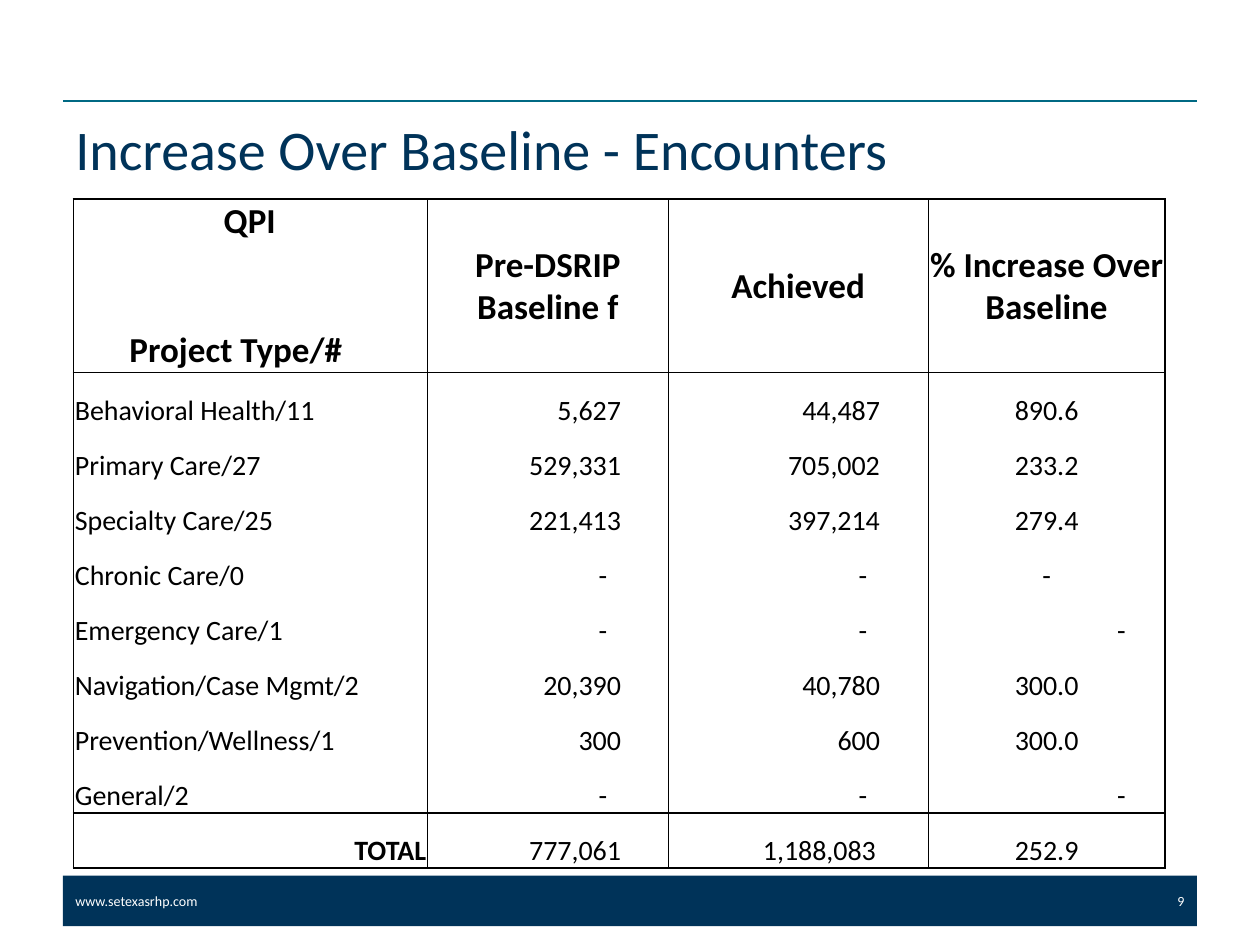
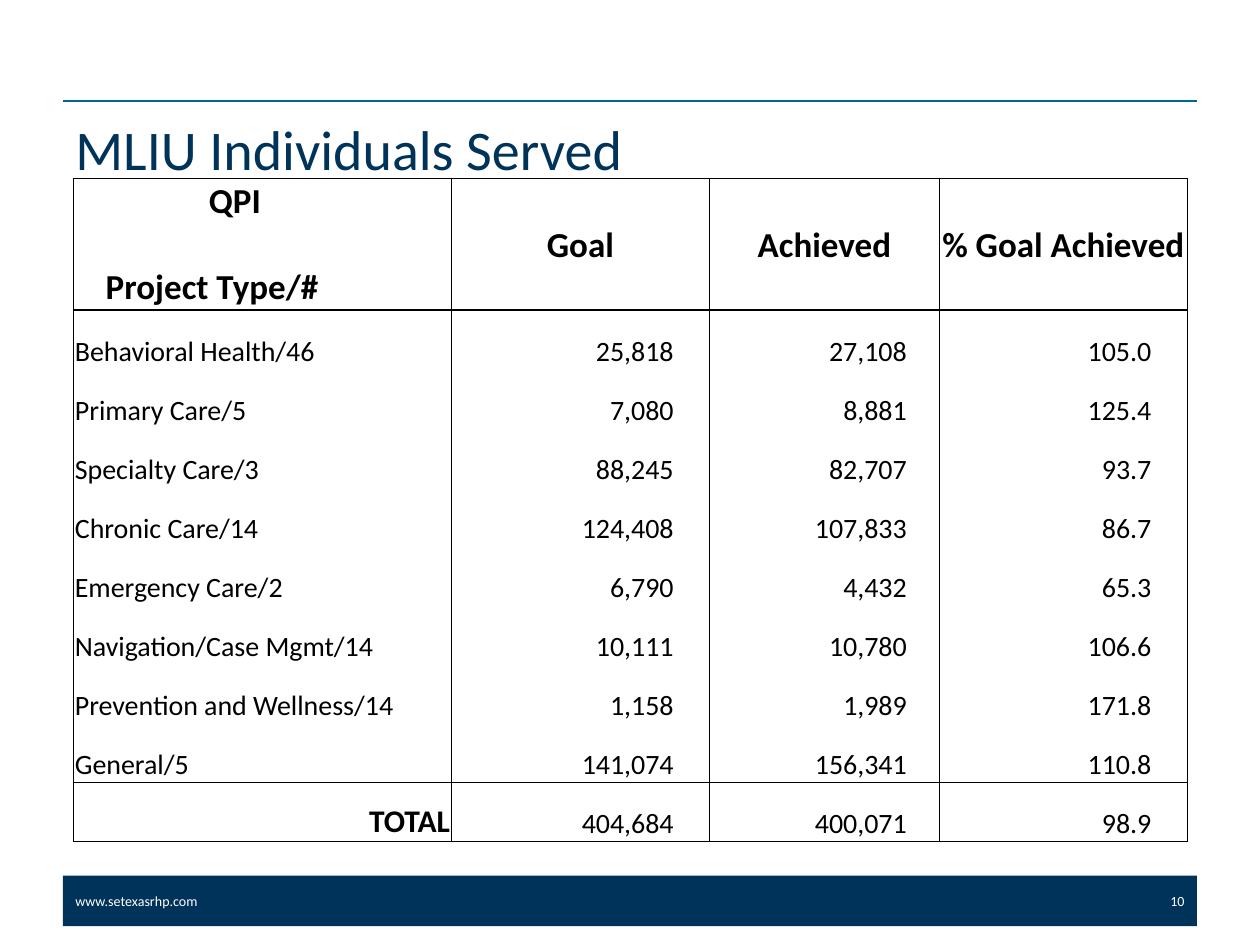
from itertools import product

from lxml.etree import SubElement
from pptx import Presentation
from pptx.dml.color import RGBColor
from pptx.enum.shapes import MSO_CONNECTOR, MSO_SHAPE
from pptx.enum.text import MSO_ANCHOR, PP_ALIGN
from pptx.oxml.ns import qn
from pptx.util import Cm, Pt

COLORS = {"navy": "003359", "teal": "006983", "white": "FFFFFF", "black": "000000"}
FONT = "Calibri"
LEFT, WIDTH = 1.27, 22.86
RULE_TOP = 2.03
BAND_TOP, BAND_HEIGHT = 17.65, 1.02
CELL_MARGIN = 0.03

ENCOUNTERS = [
    ("Behavioral Health/11", "5,627", "44,487", "890.6"),
    ("Primary Care/27", "529,331", "705,002", "233.2"),
    ("Specialty Care/25", "221,413", "397,214", "279.4"),
    ("Chronic Care/0", "-", "-", "-"),
    ("Emergency Care/1", "-", "-", "-"),
    ("Navigation/Case Mgmt/2", "20,390", "40,780", "300.0"),
    ("Prevention/Wellness/1", "300", "600", "300.0"),
    ("General/2", "-", "-", "-"),
    ("TOTAL", "777,061", "1,188,083", "252.9"),
]
INDIVIDUALS = [
    ("Behavioral Health/46", "25,818", "27,108", "105.0"),
    ("Primary Care/5", "7,080", "8,881", "125.4"),
    ("Specialty Care/3", "88,245", "82,707", "93.7"),
    ("Chronic Care/14", "124,408", "107,833", "86.7"),
    ("Emergency Care/2", "6,790", "4,432", "65.3"),
    ("Navigation/Case Mgmt/14", "10,111", "10,780", "106.6"),
    ("Prevention and Wellness/14", "1,158", "1,989", "171.8"),
    ("General/5", "141,074", "156,341", "110.8"),
    ("TOTAL", "404,684", "400,071", "98.9"),
]


def rgb(name):
    return RGBColor.from_string(COLORS[name])


def style(p, size, color="black", bold=False, align=PP_ALIGN.LEFT):
    p.alignment = align
    p.font.name = FONT
    p.font.size = Pt(size)
    p.font.bold = bold
    p.font.color.rgb = rgb(color)


def add_text(slide, text, x, y, w, h, size, color, align=PP_ALIGN.LEFT):
    tf = slide.shapes.add_textbox(Cm(x), Cm(y), Cm(w), Cm(h)).text_frame
    tf.word_wrap = True
    tf.vertical_anchor = MSO_ANCHOR.MIDDLE
    p = tf.paragraphs[0]
    p.text = text
    style(p, size, color, align=align)


def add_frame(slide, title, number):
    band = slide.shapes.add_shape(
        MSO_SHAPE.RECTANGLE, Cm(LEFT), Cm(BAND_TOP), Cm(WIDTH), Cm(BAND_HEIGHT))
    band.shadow.inherit = False
    band.fill.solid()
    band.fill.fore_color.rgb = rgb("navy")
    band.line.fill.background()
    add_text(slide, "www.setexasrhp.com", LEFT, BAND_TOP, 7.82, BAND_HEIGHT, 8, "white")
    add_text(slide, str(number), LEFT + WIDTH - 3.81, BAND_TOP, 3.81, BAND_HEIGHT,
             8, "white", PP_ALIGN.RIGHT)
    rule = slide.shapes.add_connector(
        MSO_CONNECTOR.STRAIGHT, Cm(LEFT), Cm(RULE_TOP), Cm(LEFT + WIDTH), Cm(RULE_TOP))
    rule.line.color.rgb = rgb("teal")
    rule.line.width = Pt(1)
    SubElement(rule._element.spPr, qn("a:effectLst"))
    add_text(slide, title, LEFT, RULE_TOP, WIDTH, 1.9, 32, "navy")


def set_borders(cell, widths):
    tcPr = cell._tc.get_or_add_tcPr()
    for side, width in zip("LRTB", widths):
        ln = SubElement(tcPr, qn(f"a:ln{side}"), w=str(Pt(width)))
        if width:
            fill = SubElement(ln, qn("a:solidFill"))
            SubElement(fill, qn("a:srgbClr"), val=COLORS["black"])
        else:
            SubElement(ln, qn("a:noFill"))


def fill_corner(cell, indents, gap):
    cell.vertical_anchor = MSO_ANCHOR.TOP
    cell.text = "QPI\nProject Type/#"
    for p, indent in zip(cell.text_frame.paragraphs, indents):
        p._p.get_or_add_pPr().set("marL", str(Cm(indent)))
        style(p, 20, bold=True)
    p.space_before = Pt(gap)


def fill_cell(cell, text, size, bold, align, anchor, inset=CELL_MARGIN):
    cell.text = text
    cell.vertical_anchor = anchor
    cell.margin_right = Cm(inset)
    style(cell.text_frame.paragraphs[0], size, bold=bold, align=align)


def add_qpi_table(slide, x, y, col_widths, head_height, row_height, headings, rows,
                  corner_indents, corner_gap, insets, special_insets, total_size, right_border):
    n_rows, n_cols = len(rows) + 1, len(col_widths)
    last_row, last_col = n_rows - 1, n_cols - 1
    heights = [head_height] + [row_height] * len(rows)
    table = slide.shapes.add_table(
        n_rows, n_cols, Cm(x), Cm(y), Cm(sum(col_widths)), Cm(sum(heights))).table
    table.first_row = table.horz_banding = False
    for col, width in zip(table.columns, col_widths):
        col.width = Cm(width)
    for row, height in zip(table.rows, heights):
        row.height = Cm(height)

    for r, c in product(range(n_rows), range(n_cols)):
        cell = table.cell(r, c)
        set_borders(cell, (
            1 if c == 0 else 0.5,
            right_border if c == last_col else 0.5,
            1 if r in (0, 1, last_row) else 0,
            1 if r in (0, last_row - 1, last_row) else 0))
        cell.fill.background()
        cell.margin_left = cell.margin_right = cell.margin_top = Cm(CELL_MARGIN)
        cell.margin_bottom = 0
        if r == 0 and c == 0:
            fill_corner(cell, corner_indents, corner_gap)
        elif r == 0:
            fill_cell(cell, headings[c - 1], 20, True, PP_ALIGN.CENTER, MSO_ANCHOR.MIDDLE)
        elif c == 0:
            total = r == last_row
            fill_cell(cell, rows[r - 1][c], total_size if total else 16, total,
                      PP_ALIGN.RIGHT if total else PP_ALIGN.LEFT, MSO_ANCHOR.BOTTOM)
        else:
            inset = special_insets.get((r, c), insets[c - 1])
            align = PP_ALIGN.CENTER if inset == CELL_MARGIN else PP_ALIGN.RIGHT
            fill_cell(cell, rows[r - 1][c], 16, False, align, MSO_ANCHOR.BOTTOM, inset)


def add_encounters_slide(prs):
    slide = prs.slides.add_slide(prs.slide_layouts[6])
    add_frame(slide, "Increase Over Baseline - Encounters", 9)
    dash_insets = {cell: 1.23 for cell in product((4, 5, 8), (1, 2))}
    dash_insets.update({(5, 3): 0.8, (8, 3): 0.8, (9, 2): 1.05})
    add_qpi_table(
        slide, 1.48, 4.01, (7.14, 4.85, 5.24, 4.78), 3.5, 1.11,
        ("Pre-DSRIP Baseline f", "Achieved", "% Increase Over Baseline"), ENCOUNTERS,
        (3, 1.1), 48.8, (0.95, 0.97, CELL_MARGIN), dash_insets, 16, 1)


def add_individuals_slide(prs):
    slide = prs.slides.add_slide(prs.slide_layouts[6])
    add_frame(slide, "MLIU Individuals Served", 10)
    add_qpi_table(
        slide, 1.48, 3.6, (7.62, 5.2, 4.64, 4.99), 2.65, 1.19,
        ("Goal", "Achieved", "% Goal Achieved"), INDIVIDUALS,
        (2.7, 0.62), 24.4, (0.72, 0.66, 0.72), {}, 18, 0.5)


def main():
    prs = Presentation()
    prs.slide_width, prs.slide_height = Cm(25.4), Cm(19.05)
    add_encounters_slide(prs)
    add_individuals_slide(prs)
    prs.save("out.pptx")


if __name__ == "__main__":
    main()
